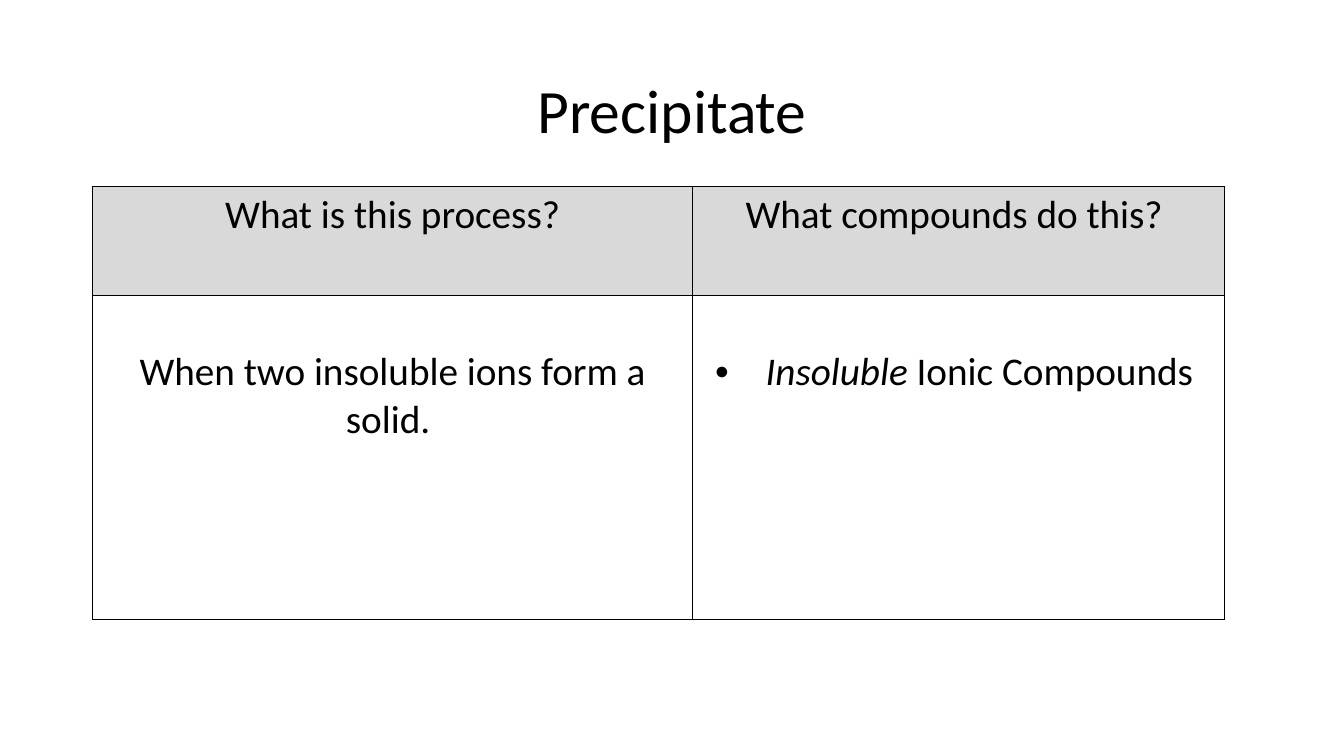
import pptx
import pptx.util
import pptx.dml.color
import pptx.enum.text
import pptx.oxml
import pptx.oxml.ns
import lxml.etree

Pt = pptx.util.Pt
BLACK = pptx.dml.color.RGBColor(0x00, 0x00, 0x00)
WHITE = pptx.dml.color.RGBColor(0xFF, 0xFF, 0xFF)
HEADER_GRAY = pptx.dml.color.RGBColor(0xD9, 0xD9, 0xD9)

TITLE_FORMAT = {"name": "Calibri", "size": Pt(44), "bold": False}
CELL_FORMAT = {"name": "Calibri", "size": Pt(28), "bold": False}
COLUMN_WIDTHS = (428.4, 380.2)
ROW_HEIGHTS = (77.8, 231.8)
HEADER_TOP, BODY_TOP = 3.6, 37.8  # body text starts one line lower


def add_element(parent, tag, **attributes):
    """Append a drawing element with the given attributes."""
    return lxml.etree.SubElement(parent, pptx.oxml.ns.qn(tag), attributes)


def write_spans(para, spans, text_format):
    """Write centred (text, italic) spans in one format."""
    para.alignment = pptx.enum.text.PP_ALIGN.CENTER
    for text, italic in spans:
        span = para.add_run()
        span.text = text
        for name, value in text_format.items():
            setattr(span.font, name, value)
        span.font.italic = italic
        span.font.color.rgb = BLACK


def add_bullet(para):
    """Give a paragraph a hanging bullet."""
    properties = para._p.get_or_add_pPr()
    indent = Pt(36)
    properties.set("marL", str(indent))
    properties.set("indent", str(-indent))
    add_element(properties, "a:buFont", typeface="Arial")
    add_element(properties, "a:buChar", char="•")


def add_borders(cell):
    """Draw a thin black line on every side of a cell."""
    properties = cell._tc.get_or_add_tcPr()
    for position, side in enumerate(("a:lnL", "a:lnR", "a:lnT", "a:lnB")):
        line = lxml.etree.Element(pptx.oxml.ns.qn(side), w=str(Pt(1)))
        fill = add_element(line, "a:solidFill")
        add_element(fill, "a:srgbClr", val=str(BLACK))
        properties.insert(position, line)


def add_title(page, text):
    box = page.shapes.add_textbox(Pt(66.2), Pt(28.8), Pt(828), Pt(104.4))
    frame = box.text_frame
    frame.word_wrap = True
    frame.vertical_anchor = pptx.enum.text.MSO_ANCHOR.MIDDLE
    para = frame.paragraphs[0]
    para.line_spacing = 0.9
    write_spans(para, [(text, False)], TITLE_FORMAT)


def fill_cell(cell, spans, color, top, bulleted):
    cell.fill.solid()
    cell.fill.fore_color.rgb = color
    cell.margin_top = Pt(top)
    add_borders(cell)
    para = cell.text_frame.paragraphs[0]
    if bulleted:
        add_bullet(para)
    write_spans(para, spans, CELL_FORMAT)


def add_process_table(page, rows):
    frame = page.shapes.add_table(
        len(ROW_HEIGHTS), len(COLUMN_WIDTHS), Pt(66.2), Pt(133.2),
        Pt(sum(COLUMN_WIDTHS)), Pt(sum(ROW_HEIGHTS)))
    table = frame.table
    table.first_row = False
    table.horz_banding = False
    for column, width in zip(table.columns, COLUMN_WIDTHS):
        column.width = Pt(width)
    for row, height in zip(table.rows, ROW_HEIGHTS):
        row.height = Pt(height)
    for row, (color, top, contents) in zip(table.rows, rows):
        for cell, (spans, bulleted) in zip(row.cells, contents):
            fill_cell(cell, spans, color, top, bulleted)


def main():
    deck = pptx.Presentation()
    deck.slide_width, deck.slide_height = Pt(960), Pt(540)
    page = deck.slides.add_slide(deck.slide_layouts[6])

    # Title
    add_title(page, "Precipitate")

    # Questions above their answers
    questions = [
        ([("What is this process?", False)], False),
        ([("What compounds do this? ", False)], False),
    ]
    answers = [
        ([("When two insoluble ions form a solid. ", False)], False),
        ([("Insoluble", True), (" Ionic Compounds ", False)], True),
    ]
    add_process_table(page, [
        (HEADER_GRAY, HEADER_TOP, questions),
        (WHITE, BODY_TOP, answers),
    ])

    deck.save("out.pptx")


if __name__ == "__main__":
    main()
